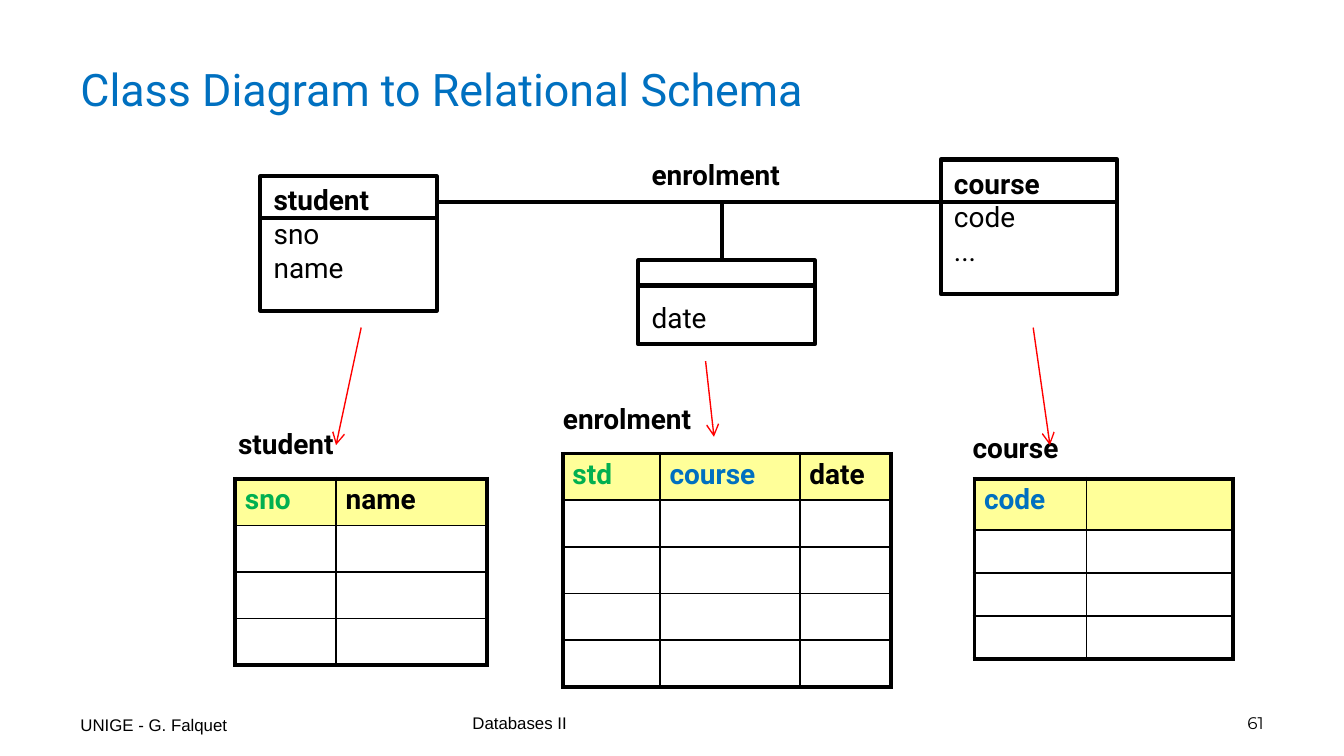
from pptx import Presentation
from pptx.dml.color import RGBColor
from pptx.enum.shapes import MSO_CONNECTOR, MSO_SHAPE
from pptx.enum.text import MSO_ANCHOR, PP_ALIGN
from pptx.oxml import parse_xml
from pptx.oxml.ns import nsdecls, qn
from pptx.util import Pt
from lxml import etree

STRAIGHT = MSO_CONNECTOR.STRAIGHT
RECTANGLE = MSO_SHAPE.RECTANGLE
TOP, MIDDLE, BOTTOM = MSO_ANCHOR.TOP, MSO_ANCHOR.MIDDLE, MSO_ANCHOR.BOTTOM
LEFT, RIGHT = PP_ALIGN.LEFT, PP_ALIGN.RIGHT

COLORS = {
    "black": "000000",
    "blue": "0070C0",
    "green": "00B050",
    "red": "FF0000",
    "header": "FFFF99",
}
THICK, THIN = 2.25, 1
BOX_WIDTH = 94.5

prs = Presentation()
prs.slide_width, prs.slide_height = Pt(720), Pt(405)
slide = prs.slides.add_slide(prs.slide_layouts[6])
shapes = slide.shapes


def style(paragraph, size=15, font="Roboto", color="black", bold=False, align=LEFT):
    paragraph.alignment = align
    for run in paragraph.runs:
        run.font.size = Pt(size)
        run.font.name = font
        run.font.bold = bold
        run.font.color.rgb = RGBColor.from_string(COLORS[color])


def add_line(x1, y1, x2, y2, color="black", width=THICK, arrow=False):
    line = shapes.add_connector(STRAIGHT, Pt(x1), Pt(y1), Pt(x2), Pt(y2))
    line.line.color.rgb = RGBColor.from_string(COLORS[color])
    line.line.width = Pt(width)
    if arrow:
        etree.SubElement(line.line._get_or_add_ln(), qn("a:tailEnd"), type="arrow")
    etree.SubElement(line._element.spPr, qn("a:effectLst"))


bold_label = {"bold": True}
texts = [
    ("Databases II", 246, 369, 228, 27, BOTTOM, {"size": 9, "font": "Arial"}),
    ("61", 516, 369, 168, 27, BOTTOM, {"size": 9, "font": "Montserrat", "align": RIGHT}),
    ("UNIGE - G. Falquet", 36, 369, 168, 28, BOTTOM, {"size": 9, "font": "Arial"}),
    ("Class Diagram to Relational Schema", 36, 22.5, 636, 50, MIDDLE,
     {"size": 24, "color": "blue"}),
    ("enrolment", 342, 81, BOX_WIDTH, 27, TOP, bold_label),
    ("student", 120.5, 225, BOX_WIDTH, 27, TOP, bold_label),
    ("enrolment", 294.5, 211.5, BOX_WIDTH, 27, TOP, bold_label),
    ("course", 514, 227, BOX_WIDTH, 27, TOP, bold_label),
]
for text, left, top, width, height, anchor, look in texts:
    frame = shapes.add_textbox(Pt(left), Pt(top), Pt(width), Pt(height)).text_frame
    frame.word_wrap = True
    frame.vertical_anchor = anchor
    frame.text = text
    style(frame.paragraphs[0], **look)

classes = [
    (139.5, 94.5, 72, 117, 3.6, "student", ["sno", "name"]),
    (504, 85.5, 72, 108, 3.6, "course", ["code", "..."]),
    (342, 139.5, 45, 153, 21.6, None, ["date"]),
]
for left, top, height, divider, inset, class_name, attributes in classes:
    box = shapes.add_shape(RECTANGLE, Pt(left), Pt(top), Pt(BOX_WIDTH), Pt(height))
    box.shadow.inherit = False
    box.fill.background()
    box.line.color.rgb = RGBColor.from_string(COLORS["black"])
    box.line.width = Pt(THICK)
    frame = box.text_frame
    frame.word_wrap = True
    frame.vertical_anchor = TOP
    frame.margin_top = Pt(inset)
    frame.text = "\n".join([class_name] * bool(class_name) + attributes)
    for paragraph in frame.paragraphs:
        style(paragraph, bold=paragraph.text == class_name)
    add_line(left, divider, left + BOX_WIDTH, divider)

add_line(387, 139.5, 387, 108)
add_line(234, 108, 504, 108)

relations = [
    (126, 256.5, [54, 81], [25] * 4, [("sno", "green"), ("name", "black")]),
    (301.5, 243, [52, 75, 49], [25] * 5,
     [("std", "green"), ("course", "blue"), ("date", "black")]),
    (522, 256.5, [60, 78.5], [27.5, 23, 23, 23], [("code", "blue"), ("", "black")]),
]
for left, top, widths, heights, columns in relations:
    table = shapes.add_table(len(heights), len(widths), Pt(left), Pt(top),
                             Pt(sum(widths)), Pt(sum(heights))).table
    table.horz_banding = False
    for column, width in zip(table.columns, widths):
        column.width = Pt(width)
    for r, height in enumerate(heights):
        table.rows[r].height = Pt(height)
        for c, (heading, color) in enumerate(columns):
            cell = table.cell(r, c)
            cell.margin_left = cell.margin_right = Pt(5.2)
            cell.margin_top = cell.margin_bottom = Pt(2.6)
            paragraph = cell.text_frame.paragraphs[0]
            if r == 0 and heading:
                paragraph.text = heading
                style(paragraph, color=color, bold=True)
            else:
                paragraph._p.get_or_add_endParaRPr().set("sz", "1200")
            if r == 0:
                cell.fill.solid()
                cell.fill.fore_color.rgb = RGBColor.from_string(COLORS["header"])
            else:
                cell.fill.background()
            outer_sides = {"L": c == 0, "R": c == len(widths) - 1,
                           "T": r == 0, "B": r == len(heights) - 1}
            for i, (side, outer) in enumerate(outer_sides.items()):
                weight = Pt(THICK if outer else THIN)
                cell._tc.get_or_add_tcPr().insert(i, parse_xml(
                    f'<a:ln{side} {nsdecls("a")} w="{weight}"><a:solidFill>'
                    f'<a:srgbClr val="{COLORS["black"]}"/></a:solidFill></a:ln{side}>'))

for ends in [(193.5, 175.5, 180, 238.5), (378, 193.5, 382.5, 234),
             (553.5, 175.5, 562.5, 238.5)]:
    add_line(*ends, color="red", width=0.75, arrow=True)

prs.save("out.pptx")
